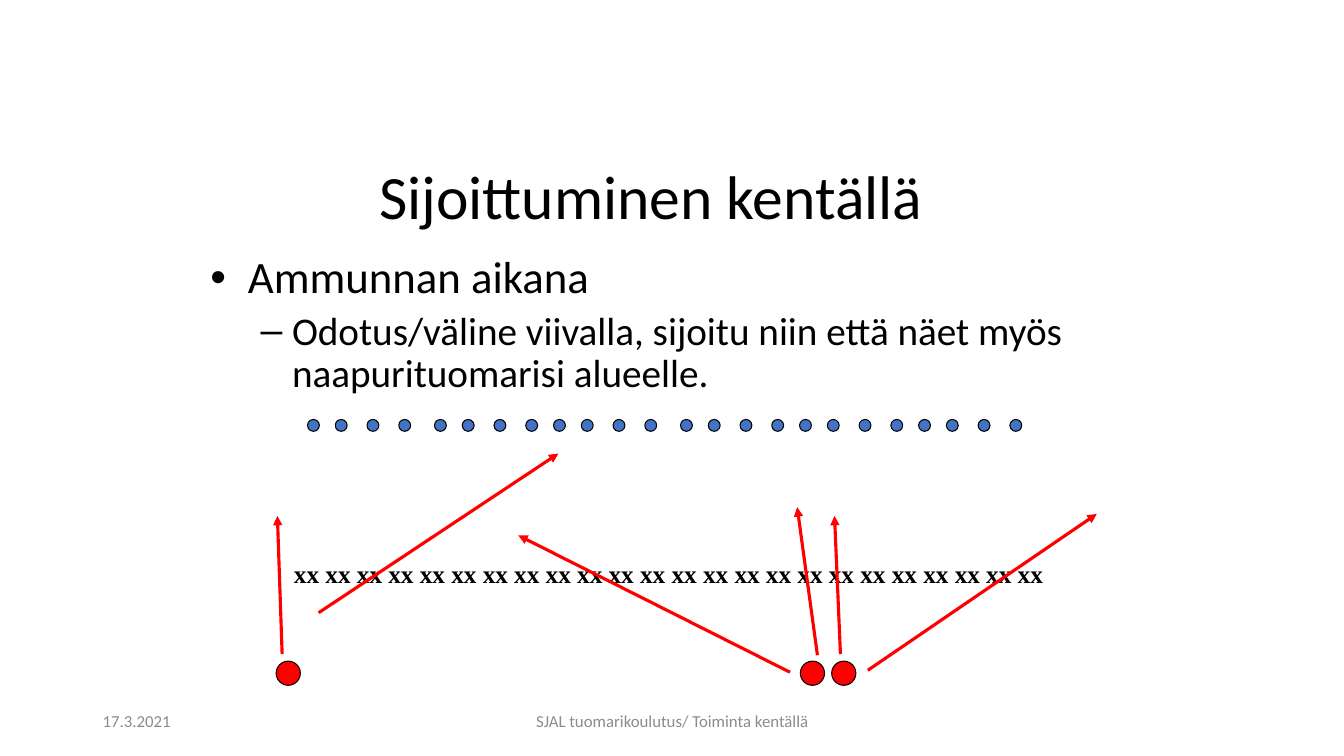
from lxml.etree import SubElement
from pptx import Presentation
from pptx.dml.color import RGBColor
from pptx.enum.shapes import MSO_CONNECTOR as Connector, MSO_SHAPE as Shape
from pptx.enum.text import MSO_ANCHOR as Anchor, MSO_AUTO_SIZE as AutoSize, PP_ALIGN as Align
from pptx.oxml.ns import qn
from pptx.util import Cm, Pt

BLACK = RGBColor(0x00, 0x00, 0x00)
RED = RGBColor(0xFF, 0x00, 0x00)
BLUE = RGBColor(0x44, 0x72, 0xC4)
GREY = RGBColor(0x8C, 0x8C, 0x8C)

TARGET_GROUPS = (7.75, 10.95, 13.95, 17.15, 20.15, 23.15)
TARGET_OFFSETS = (0, 0.7, 1.5, 2.3)
JUDGES = (6.96, 20.17, 20.96)
VIEW_LINES = (
    ((21.87, 16.89), (27.64, 12.95)),
    ((21.18, 16.48), (21.03, 13)),
    ((7.11, 16.48), (6.99, 13)),
    ((20.6, 16.51), (20.09, 12.78)),
    ((19.91, 16.94), (13.06, 13.49)),
    ((8.03, 15.44), (14.07, 11.43)),
)


class FieldPage:
    """Draws styled elements on one title-only slide."""

    def __init__(self, deck):
        """Add the slide that the other methods fill."""
        self.page = deck.slides.add_slide(deck.slide_layouts[5])
        self.font = "Calibri"

    def format(self, paragraph, size, color=BLACK, align=Align.LEFT, font=None, bold=False):
        """Set the alignment and font of a paragraph."""
        paragraph.alignment = align
        paragraph.font.name = font or self.font
        paragraph.font.size = Pt(size)
        paragraph.font.bold = bold
        paragraph.font.color.rgb = color

    def title(self, text, left, top, width, height):
        """Move, fill and format the title placeholder."""
        box = self.page.shapes.title
        box.left, box.top, box.width, box.height = map(Cm, (left, top, width, height))
        frame = box.text_frame
        frame.text = text
        frame.auto_size = AutoSize.NONE
        frame.vertical_anchor = Anchor.MIDDLE
        frame.paragraphs[0].line_spacing = 0.9
        self.format(frame.paragraphs[0], 44, align=Align.CENTER)

    def text(self, text, left, top, width, height, size, anchor=Anchor.TOP, wrap=True, **style):
        """Add a text box with one paragraph."""
        box = self.page.shapes.add_textbox(*map(Cm, (left, top, width, height)))
        frame = box.text_frame
        frame.word_wrap = wrap
        frame.vertical_anchor = anchor
        frame.text = text
        self.format(frame.paragraphs[0], size, **style)

    def bullets(self, items, left, top, width, height):
        """Add a bulleted list of (text, mark, size, margin, indent, space) items."""
        box = self.page.shapes.add_textbox(*map(Cm, (left, top, width, height)))
        frame = box.text_frame
        frame.word_wrap = True
        for level, (text, mark, size, margin, indent, space) in enumerate(items):
            paragraph = frame.add_paragraph() if level else frame.paragraphs[0]
            paragraph.text = text
            paragraph.level = level
            properties = paragraph._p.get_or_add_pPr()
            properties.set("marL", str(Cm(margin)))
            properties.set("indent", str(Cm(indent)))
            SubElement(properties, qn("a:buFont")).set("typeface", "Arial")
            SubElement(properties, qn("a:buChar")).set("char", mark)
            paragraph.line_spacing = 0.9
            paragraph.space_before = Pt(space)
            self.format(paragraph, size)

    def dot(self, left, top, size, color):
        """Add a filled circle with a thin black outline."""
        circle = self.page.shapes.add_shape(Shape.OVAL, *map(Cm, (left, top, size, size)))
        circle.shadow.inherit = False
        circle.fill.solid()
        circle.fill.fore_color.rgb = color
        circle.line.color.rgb = BLACK
        circle.line.width = Pt(0.75)

    def arrow(self, start, end):
        """Add a red arrow from start to end."""
        line = self.page.shapes.add_connector(Connector.STRAIGHT, *map(Cm, start + end))
        line.line.color.rgb = RED
        line.line.width = Pt(2.25)
        SubElement(line.line._get_or_add_ln(), qn("a:tailEnd")).set("type", "triangle")
        SubElement(line._element.spPr, qn("a:effectLst"))


def main():
    """Build and save the slide."""
    deck = Presentation()
    deck.slide_width, deck.slide_height = Cm(33.87), Cm(19.05)
    field = FieldPage(deck)
    field.title("Sijoittuminen kentällä", 4.98, 3.45, 22.86, 3.18)
    field.bullets(
        (
            ("Ammunnan aikana", "•", 32, 0.95, -0.95, 0),
            ("Odotus/väline viivalla, sijoitu niin että näet myös naapurituomarisi alueelle.",
             "–", 28, 2.06, -0.79, 5.6),
        ),
        5.05, 6.3, 22.86, 12.57,
    )
    for group in TARGET_GROUPS:
        for offset in TARGET_OFFSETS:
            field.dot(group + offset, 10.57, 0.3, BLUE)
    field.text(" ".join(["xx"] * 24), 7.16, 13.94, 19.41, 1.02, 18,
               wrap=False, font="Times New Roman", bold=True)
    for left in JUDGES:
        field.dot(left, 16.66, 0.61, RED)
    for start, end in VIEW_LINES:
        field.arrow(start, end)
    field.text("17.3.2021", 2.34, 17.65, 7.62, 1.02, 12, Anchor.MIDDLE, color=GREY)
    field.text("SJAL tuomarikoulutus/ Toiminta kentällä", 11.23, 17.65, 11.43, 1.02, 12,
               Anchor.MIDDLE, color=GREY, align=Align.CENTER)
    deck.save("out.pptx")


if __name__ == "__main__":
    main()
